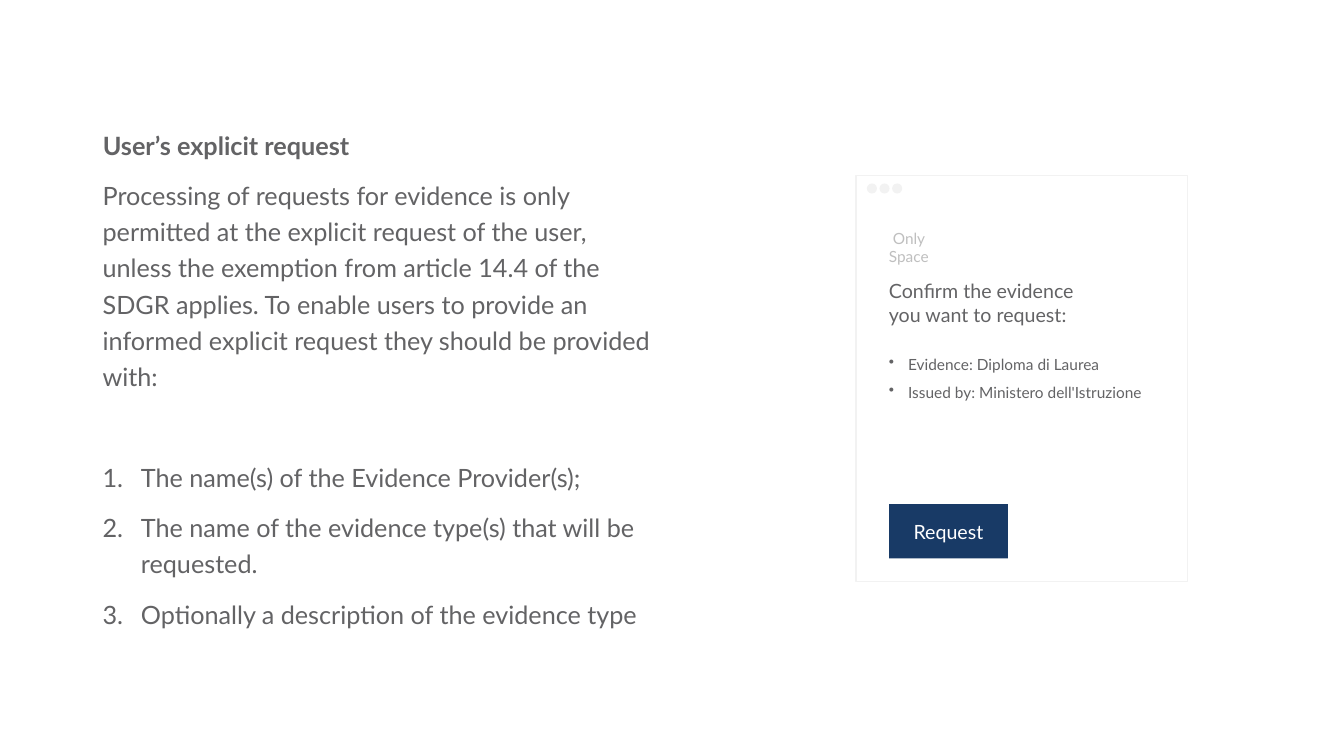
"""Build a slide on the user's explicit request, with a mock confirmation window."""
from dataclasses import dataclass

from lxml.etree import SubElement
from pptx import Presentation
from pptx.dml.color import RGBColor
from pptx.enum.shapes import MSO_SHAPE as Preset
from pptx.enum.text import MSO_ANCHOR as Anchor, MSO_AUTO_SIZE as AutoSize, PP_ALIGN as Align
from pptx.oxml.ns import qn
from pptx.shapes.autoshape import Shape
from pptx.slide import Slide
from pptx.util import Inches, Pt

WIDTH, HEIGHT = Inches(13.33), Inches(7.5)
FONT = "Lato"
GREY = RGBColor(0x63, 0x63, 0x65)
PALE = RGBColor(0xF2, 0xF2, 0xF2)
MUTED = RGBColor(0xBF, 0xBF, 0xBF)
NAVY = RGBColor(0x18, 0x3A, 0x66)
WHITE = RGBColor(0xFF, 0xFF, 0xFF)


@dataclass(frozen=True)
class Area:
    """A rectangle in percent of the slide's width and height."""
    left: float
    top: float
    width: float
    height: float

    def lengths(self) -> tuple[int, int, int, int]:
        """Return left, top, width and height as slide lengths."""
        return (int(WIDTH * self.left / 100), int(HEIGHT * self.top / 100),
                int(WIDTH * self.width / 100), int(HEIGHT * self.height / 100))


@dataclass(frozen=True)
class Para:
    """One paragraph with its list mark and spacing."""
    text: str
    mark: str = ""
    indent: float = 0
    before: float = 0
    spacing: float = 1.0


HEADING = Area(6.9, 16.53, 42.6, 5.33)
EXPLANATION = Area(6.9, 22.67, 42.6, 61.2)
WINDOW = Area(63.68, 23.2, 24.68, 53.73)
DOTS = [Area(64.5 + 0.94 * i, 24.27, 0.75, 1.33) for i in range(3)]
SPACE_NAME = Area(65.4, 29.6, 7.13, 5.73)
PROMPT = Area(65.4, 36.27, 17.25, 7.6)
FACTS = Area(65.4, 45.07, 22.88, 8.4)
BUTTON = Area(66.15, 66.67, 8.85, 7.2)

INTRO = ("Processing of requests for evidence is only permitted at the explicit request "
         "of the user, unless the exemption from article 14.4 of the SDGR applies. "
         "To enable users to provide an informed explicit request they should be provided with:")
REQUIREMENTS = ["The name(s) of the Evidence Provider(s);",
                "The name of the evidence type(s) that will be requested.",
                "Optionally a description of the evidence type"]
EVIDENCE_FACTS = ["Evidence: Diploma di Laurea", "Issued by: Ministero dell'Istruzione"]


def write(shape: Shape, paras: list[Para], *, size: float, color: RGBColor = GREY,
          bold: bool = False, align: Align = Align.LEFT, anchor: Anchor = Anchor.TOP) -> None:
    """Fill a shape with formatted paragraphs."""
    frame = shape.text_frame
    frame.word_wrap = True
    frame.auto_size = AutoSize.NONE
    frame.vertical_anchor = anchor
    for i, para in enumerate(paras):
        line = frame.paragraphs[0] if i == 0 else frame.add_paragraph()
        line.text = para.text
        line.alignment = align
        line.line_spacing = para.spacing
        line.space_before = Pt(para.before)
        for run in line.runs:
            run.font.name, run.font.size, run.font.bold = FONT, Pt(size), bold
            run.font.color.rgb = color
        if para.mark:
            props = line._p.get_or_add_pPr()
            props.set("marL", str(Inches(para.indent)))
            props.set("indent", str(-Inches(para.indent)))
            if para.mark == "1.":
                SubElement(props, qn("a:buAutoNum"), type="arabicPeriod")
            else:
                SubElement(props, qn("a:buChar"), char=para.mark)


def add_text(slide: Slide, area: Area, paras: list[Para], *, size: float,
             color: RGBColor = GREY, anchor: Anchor = Anchor.TOP) -> None:
    """Add a text box."""
    write(slide.shapes.add_textbox(*area.lengths()), paras, size=size, color=color, anchor=anchor)


def add_figure(slide: Slide, preset: Preset, area: Area, *, fill: RGBColor | None = None,
               outline: RGBColor | None = None) -> Shape:
    """Add a flat preset shape."""
    figure = slide.shapes.add_shape(preset, *area.lengths())
    figure.shadow.inherit = False
    if fill is None:
        figure.fill.background()
    else:
        figure.fill.solid()
        figure.fill.fore_color.rgb = fill
    if outline is None:
        figure.line.fill.background()
    else:
        figure.line.color.rgb = outline
        figure.line.width = Pt(1)
    return figure


def add_explanation(slide: Slide) -> None:
    """Add the heading, the introduction and the numbered requirements."""
    heading = slide.shapes.title
    heading.left, heading.top, heading.width, heading.height = HEADING.lengths()
    write(heading, [Para("User’s explicit request")], size=18, bold=True, anchor=Anchor.BOTTOM)
    requirements = [Para(text, "1.", 0.38, 10 if i else 46, 1.2)
                    for i, text in enumerate(REQUIREMENTS)]
    add_text(slide, EXPLANATION, [Para(INTRO, spacing=1.2), *requirements],
             size=18, anchor=Anchor.BOTTOM)


def add_window(slide: Slide) -> None:
    """Add the mock window in which the user confirms the request."""
    add_figure(slide, Preset.RECTANGLE, WINDOW, outline=PALE)
    for dot in DOTS:
        add_figure(slide, Preset.OVAL, dot, fill=PALE)
    add_text(slide, SPACE_NAME, [Para(" Only\vSpace")], size=11, color=MUTED)
    add_text(slide, PROMPT, [Para("Confirm the evidence you want to request:")], size=14)
    add_text(slide, FACTS, [Para(fact, "•", 0.19, spacing=1.5) for fact in EVIDENCE_FACTS], size=11)
    button = add_figure(slide, Preset.RECTANGLE, BUTTON, fill=NAVY)
    write(button, [Para("Request")], size=14, color=WHITE, align=Align.CENTER, anchor=Anchor.MIDDLE)


def main() -> None:
    """Build and save the presentation."""
    deck = Presentation()
    deck.slide_width, deck.slide_height = WIDTH, HEIGHT
    slide = deck.slides.add_slide(deck.slide_layouts[5])
    add_explanation(slide)
    add_window(slide)
    deck.save("out.pptx")


if __name__ == "__main__":
    main()
